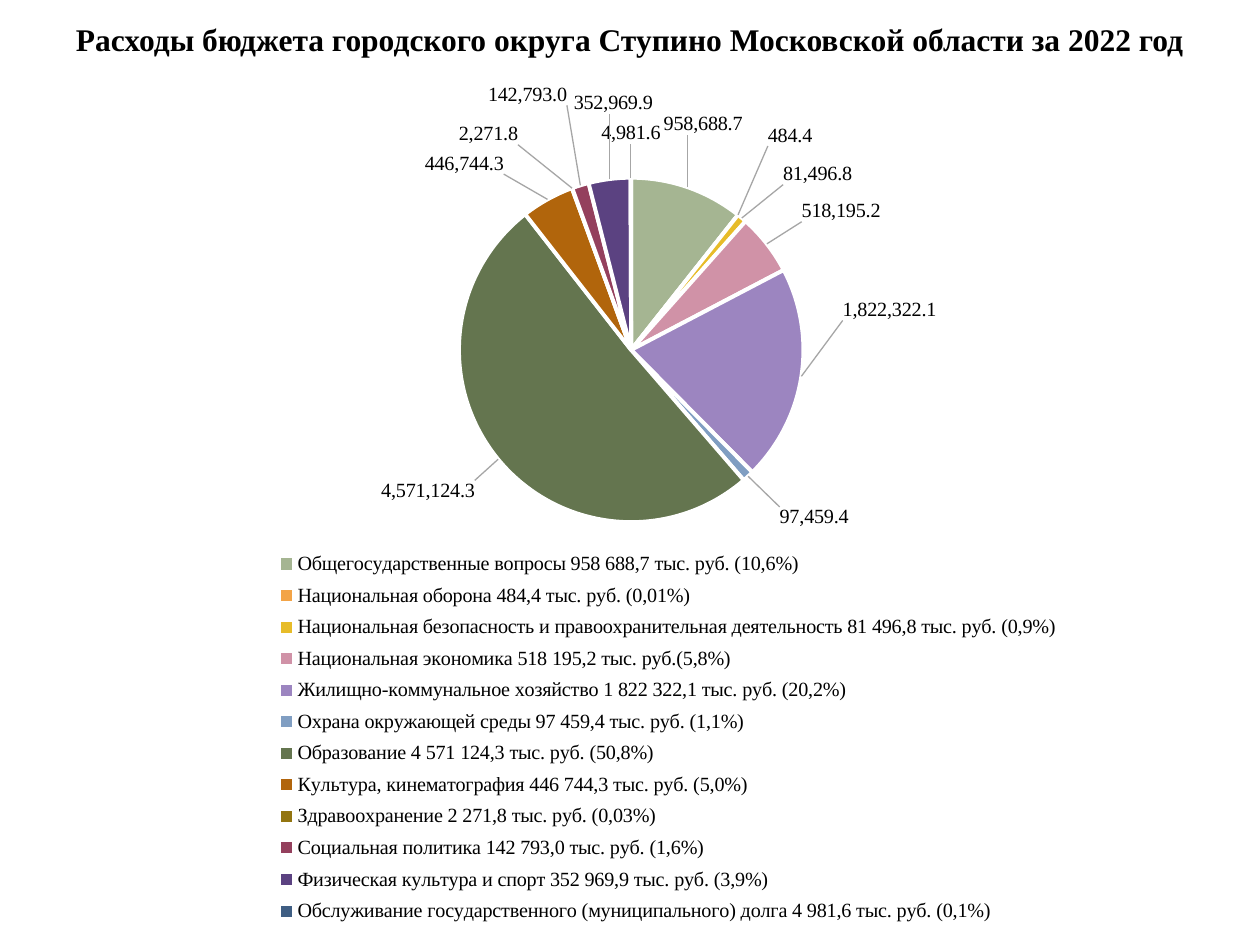
from typing import NamedTuple

from lxml import etree
from pptx import Presentation
from pptx.chart.data import CategoryChartData
from pptx.dml.color import RGBColor
from pptx.enum.chart import XL_CHART_TYPE, XL_LABEL_POSITION, XL_LEGEND_POSITION
from pptx.enum.text import MSO_ANCHOR, PP_ALIGN
from pptx.oxml import parse_xml
from pptx.oxml.ns import nsdecls, qn
from pptx.util import Inches, Pt

PIE = XL_CHART_TYPE.PIE
BEST_FIT = XL_LABEL_POSITION.BEST_FIT
LEGEND_RIGHT = XL_LEGEND_POSITION.RIGHT
CENTER = PP_ALIGN.CENTER
MIDDLE = MSO_ANCHOR.MIDDLE

FONT = "Times New Roman"
NUMBER_FORMAT = "#,##0.0"
CHART_W, CHART_H = 10, 6.87
COLORS = {"text": "000000", "border": "FFFFFF", "leader": "A6A6A6"}


class Expense(NamedTuple):
    name: str
    value: float
    color: str
    dx: float
    dy: float


EXPENSES = [
    Expense("Общегосударственные вопросы 958 688,7 тыс. руб. (10,6%)", 958688.7, "A5B592", -0.21, -0.36),
    Expense("Национальная оборона 484,4 тыс. руб. (0,01%)", 484.4, "F3A447", 0.2, -0.5),
    Expense("Национальная безопасность и правоохранительная деятельность 81 496,8 тыс. руб. (0,9%)",
            81496.8, "E7BC29", 0.29, -0.22),
    Expense("Национальная экономика 518 195,2 тыс. руб.(5,8%)", 518195.2, "D092A7", 0.23, -0.14),
    Expense("Жилищно-коммунальное хозяйство 1 822 322,1 тыс. руб. (20,2%)", 1822322.1, "9C85C0", 0.27, -0.62),
    Expense("Охрана окружающей среды 97 459,4 тыс. руб. (1,1%)", 97459.4, "809EC2", 0.21, 0.2),
    Expense("Образование 4 571 124,3 тыс. руб. (50,8%)", 4571124.3, "64754F", -0.14, 0.13),
    Expense("Культура, кинематография 446 744,3 тыс. руб. (5,0%)", 446744.3, "B1650C", -0.32, -0.15),
    Expense("Здравоохранение 2 271,8 тыс. руб. (0,03%)", 2271.8, "937510", -0.41, -0.29),
    Expense("Социальная политика 142 793,0 тыс. руб. (1,6%)", 142793.0, "94405D", -0.09, -0.58),
    Expense("Физическая культура и спорт 352 969,9 тыс. руб. (3,9%)", 352969.9, "5B4281", 0.35, -0.46),
    Expense("Обслуживание государственного (муниципального) долга 4 981,6 тыс. руб. (0,1%)",
            4981.6, "3F5E83", 0, -0.21),
]


def rgb(name: str) -> RGBColor:
    return RGBColor.from_string(COLORS[name])


def set_font(font, size: float) -> None:
    font.name = FONT
    font.size = Pt(size)
    font.color.rgb = rgb("text")


def make_layout(**values):
    layout = parse_xml(f"<c:layout {nsdecls('c')}><c:manualLayout/></c:layout>")
    for tag, value in values.items():
        etree.SubElement(layout[0], qn(f"c:{tag}")).set("val", str(value))
    return layout


def place(parent, after: str, layout) -> None:
    for old in parent.findall(qn("c:layout")):
        parent.remove(old)
    anchor = parent.find(qn(after))
    if anchor is None:
        parent.insert(0, layout)
    else:
        anchor.addnext(layout)


def add_title(s, text: str) -> None:
    sp = s.shapes.title
    sp.left, sp.top, sp.width, sp.height = Inches(0), Inches(0.11), Inches(10), Inches(0.4)
    tf = sp.text_frame
    tf.word_wrap = True
    tf.vertical_anchor = MIDDLE
    p = tf.paragraphs[0]
    p.text = text
    p.alignment = CENTER
    set_font(p.font, 18)
    p.font.bold = True


def style_slice(series, index: int, expense: Expense) -> None:
    point = series.points[index]
    fill = point.format.fill
    fill.solid()
    fill.fore_color.rgb = RGBColor.from_string(expense.color)
    line = point.format.line
    line.color.rgb = rgb("border")
    line.width = Pt(2.25)
    label = point.data_label
    set_font(label.font, 11.5)
    label.position = BEST_FIT


def style_labels(series) -> None:
    labels = series.data_labels
    labels.show_value = True
    labels.number_format = NUMBER_FORMAT
    labels.number_format_is_linked = False
    set_font(labels.font, 11.5)
    group = series._element.find(qn("c:dLbls"))
    for label, expense in zip(group.findall(qn("c:dLbl")), EXPENSES):
        layout = make_layout(x=round(expense.dx / CHART_W, 4), y=round(expense.dy / CHART_H, 4))
        place(label, "c:idx", layout)
        layout.addnext(parse_xml(
            f'<c:numFmt {nsdecls("c")} formatCode="{NUMBER_FORMAT}" sourceLinked="0"/>'))
    for tag in ("c:showLeaderLines", "c:leaderLines"):
        for old in group.findall(qn(tag)):
            group.remove(old)
    etree.SubElement(group, qn("c:showLeaderLines")).set("val", "1")
    group.append(parse_xml(
        f'<c:leaderLines {nsdecls("c", "a")}><c:spPr><a:ln w="9525"><a:solidFill>'
        f'<a:srgbClr val="{COLORS["leader"]}"/></a:solidFill></a:ln></c:spPr></c:leaderLines>'))


def add_pie(s, expenses: list[Expense]) -> None:
    data = CategoryChartData(number_format=NUMBER_FORMAT)
    data.categories = [e.name for e in expenses]
    data.add_series("Series 1", [e.value for e in expenses])
    chart = s.shapes.add_chart(
        PIE, Inches(0), Inches(0.6), Inches(CHART_W), Inches(CHART_H), data).chart
    chart.has_title = False
    set_font(chart.font, 11.5)
    chart.has_legend = True
    legend = chart.legend
    legend.position = LEGEND_RIGHT
    legend.include_in_layout = False
    set_font(legend.font, 11.5)
    place(legend._element, "c:legendPos", make_layout(
        xMode="edge", yMode="edge", x=0.21, y=0.54, w=0.64, h=0.45))
    plot = chart.plots[0]
    plot.vary_by_categories = True
    place(plot._element.getparent(), "c:layout", make_layout(
        layoutTarget="inner", xMode="edge", yMode="edge", x=0.16, y=0.118, w=0.682, h=0.398))
    series = plot.series[0]
    for i, expense in enumerate(expenses):
        style_slice(series, i, expense)
    style_labels(series)


def main() -> None:
    prs = Presentation()
    prs.slide_width, prs.slide_height = Inches(10), Inches(7.5)
    s = prs.slides.add_slide(prs.slide_layouts[5])
    add_title(s, "Расходы бюджета городского округа Ступино Московской области за 2022 год")
    add_pie(s, EXPENSES)
    prs.save("out.pptx")


if __name__ == "__main__":
    main()
